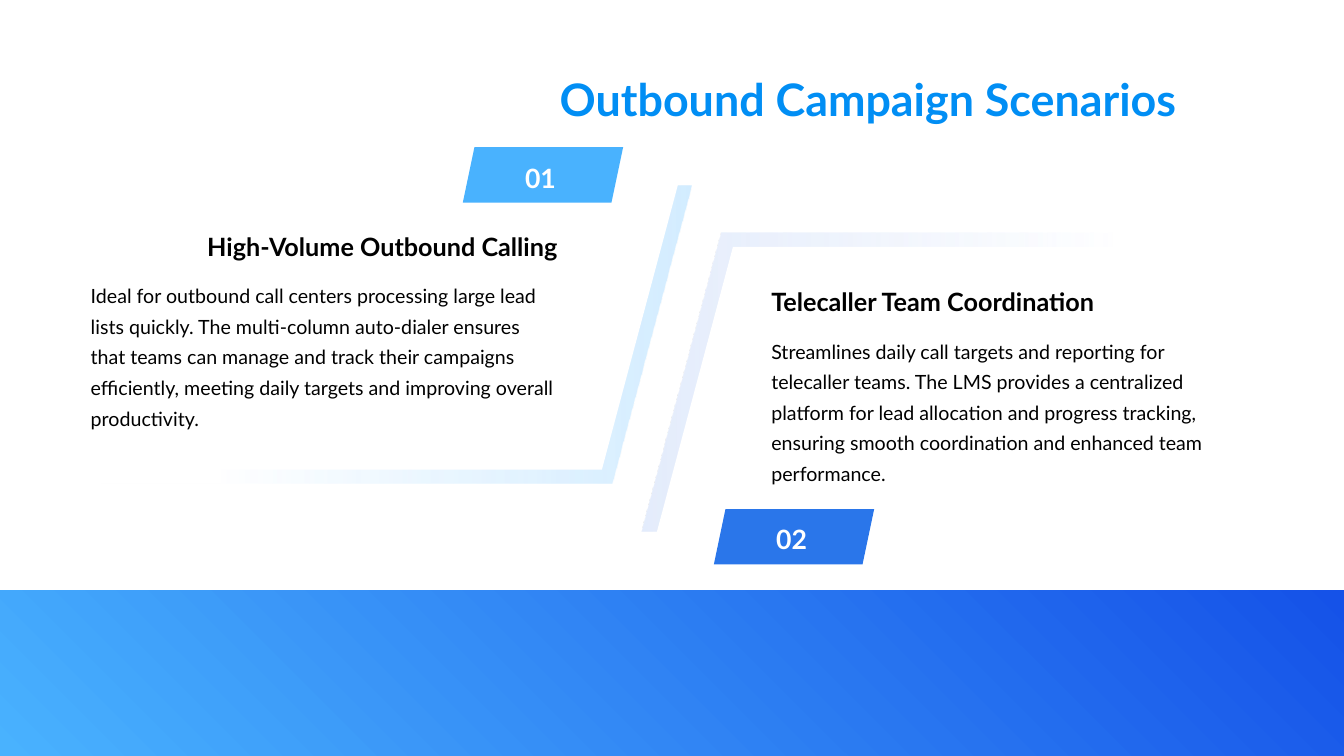
from lxml.etree import SubElement
from pptx import Presentation
from pptx.dml.color import RGBColor
from pptx.enum.shapes import MSO_SHAPE
from pptx.enum.text import MSO_ANCHOR, PP_ALIGN
from pptx.oxml.ns import qn
from pptx.util import Inches, Pt

SLIDE_WIDTH, SLIDE_HEIGHT = 13.33, 7.5
PANEL_WIDTH, PANEL_HEIGHT, PANEL_SLANT = 5.86, 2.96, 0.79
TAG_WIDTH, TAG_HEIGHT = 1.59, 0.55
HEADING_WIDTH, BODY_WIDTH = 4.16, 4.63

COLORS = {
    "title": "018EF4", "text": "000000", "white": "FFFFFF",
    "sky": "49B2FE", "royal": "1552E8", "blue": "2A76EA",
    "sky_glow": "92D1FE", "blue_glow": "BCD0F7",
}

# Font formats
TITLE_FONT = {"name": "Lato", "size": Pt(32), "bold": True}
TAG_FONT = {"name": "Lato", "size": Pt(19), "bold": True}
HEADING_FONT = {"name": "Lato", "size": Pt(18), "bold": True}
BODY_FONT = {"name": "Lato", "size": Pt(14), "bold": False}

# box: left and top of the glowing band; the other places are offsets from it
SCENARIOS = [
    {
        "box": (6.36, 2.31), "glow": "blue_glow", "glow_angle": 180,
        "front": (0.12, 0.14), "tag": (0.72, 2.74), "text": (1.29, 0.53),
        "tag_color": "blue", "number": "02", "align": PP_ALIGN.LEFT,
        "heading": "Telecaller Team Coordination",
        "body": "Streamlines daily call targets and reporting for telecaller teams. "
                "The LMS provides a centralized platform for lead allocation and "
                "progress tracking, ensuring smooth coordination and enhanced team "
                "performance.",
    },
    {
        "box": (1.0, 1.84), "glow": "sky_glow", "glow_angle": 0,
        "front": (-0.1, -0.14), "tag": (3.59, -0.38), "text": (-0.1, 0.45),
        "tag_color": "sky", "number": "01", "align": PP_ALIGN.RIGHT,
        "heading": "High-Volume Outbound Calling",
        "body": "Ideal for outbound call centers processing large lead lists quickly. "
                "The multi-column auto-dialer ensures that teams can manage and track "
                "their campaigns efficiently, meeting daily targets and improving "
                "overall productivity.",
    },
]


def set_format(target, values):
    for name, value in values.items():
        setattr(target, name, value)


def fill_solid(shape, color):
    shape.fill.solid()
    shape.fill.fore_color.rgb = RGBColor.from_string(COLORS[color])


def fill_gradient(shape, stops, angle):
    """Fill with (position %, color, opacity %) stops; angle runs counterclockwise."""
    shape.fill.gradient()
    shape.fill.gradient_angle = angle
    stop_list = shape._element.spPr.find(qn("a:gradFill")).find(qn("a:gsLst"))
    for stop in list(stop_list):
        stop_list.remove(stop)
    for position, color, opacity in stops:
        stop = SubElement(stop_list, qn("a:gs"), pos=str(position * 1000))
        value = SubElement(stop, qn("a:srgbClr"), val=COLORS[color])
        if opacity < 100:
            SubElement(value, qn("a:alpha"), val=str(opacity * 1000))


def make_plain(shape):
    shape.shadow.inherit = False
    shape.line.fill.background()
    return shape


def write_text(shape, text, font, color, align, margins, spacing=None):
    frame = shape.text_frame
    frame.word_wrap = True
    sides = ("margin_left", "margin_top", "margin_right", "margin_bottom")
    set_format(frame, {side: Inches(margin) for side, margin in zip(sides, margins)})
    paragraph = frame.paragraphs[0]
    set_format(paragraph, {"alignment": align, "line_spacing": spacing})
    run = paragraph.add_run()
    run.text = text
    set_format(run.font, font)
    run.font.color.rgb = RGBColor.from_string(COLORS[color])


def add_text(slide, box, text, font, color, align, margins=(0, 0, 0, 0), spacing=None):
    shape = slide.shapes.add_textbox(*map(Inches, box))
    write_text(shape, text, font, color, align, margins, spacing)


def add_panel(slide, left, top):
    """Slanted panel with its top edge shifted to the right."""
    bottom, right = top + PANEL_HEIGHT, left + PANEL_WIDTH
    corners = [(right - PANEL_SLANT, bottom), (left, bottom),
               (left + PANEL_SLANT, top), (right, top)]
    points = [(Inches(x), Inches(y)) for x, y in corners]
    builder = slide.shapes.build_freeform(*points[0])
    builder.add_line_segments(points[1:], close=True)
    return make_plain(builder.convert_to_shape())


def add_title(slide, box):
    add_text(slide, box, "Outbound Campaign Scenarios", TITLE_FONT, "title",
             PP_ALIGN.RIGHT, (0.1, 0.05, 0.1, 0.05))


def add_footer(slide, box):
    footer = make_plain(slide.shapes.add_shape(MSO_SHAPE.RECTANGLE, *map(Inches, box)))
    fill_gradient(footer, [(0, "sky", 100), (100, "royal", 100)], 45)


def add_scenario(slide, scenario):
    left, top = scenario["box"]

    def place(part):
        return left + scenario[part][0], top + scenario[part][1]

    # Glowing band with a white panel over it
    band = add_panel(slide, left, top)
    glow = scenario["glow"]
    fill_gradient(band, [(0, glow, 0), (20, glow, 0), (100, glow, 40)],
                  scenario["glow_angle"])
    fill_solid(add_panel(slide, *place("front")), "white")

    # Number tag
    tag_box = (*place("tag"), TAG_WIDTH, TAG_HEIGHT)
    tag = make_plain(slide.shapes.add_shape(MSO_SHAPE.PARALLELOGRAM, *map(Inches, tag_box)))
    tag.adjustments[0] = 0.21
    fill_solid(tag, scenario["tag_color"])
    write_text(tag, scenario["number"], TAG_FONT, "white", PP_ALIGN.CENTER,
               (0.05, 0.1, 0.1, 0.05))
    tag.text_frame.vertical_anchor = MSO_ANCHOR.MIDDLE

    # Heading and description
    text_left, text_top = place("text")
    indent = BODY_WIDTH - HEADING_WIDTH if scenario["align"] == PP_ALIGN.RIGHT else 0
    add_text(slide, (text_left + indent, text_top, HEADING_WIDTH, 0.4),
             scenario["heading"], HEADING_FONT, "text", scenario["align"])
    add_text(slide, (text_left, text_top + 0.46, BODY_WIDTH, 1.59),
             scenario["body"], BODY_FONT, "text", PP_ALIGN.LEFT, spacing=1.3)


def main():
    presentation = Presentation()
    presentation.slide_width = Inches(SLIDE_WIDTH)
    presentation.slide_height = Inches(SLIDE_HEIGHT)
    slide = presentation.slides.add_slide(presentation.slide_layouts[6])
    add_title(slide, (1.05, 0.66, 10.72, 0.54))
    add_footer(slide, (0, 5.86, SLIDE_WIDTH, SLIDE_HEIGHT - 5.86))
    for scenario in SCENARIOS:
        add_scenario(slide, scenario)
    presentation.save("out.pptx")


if __name__ == "__main__":
    main()
